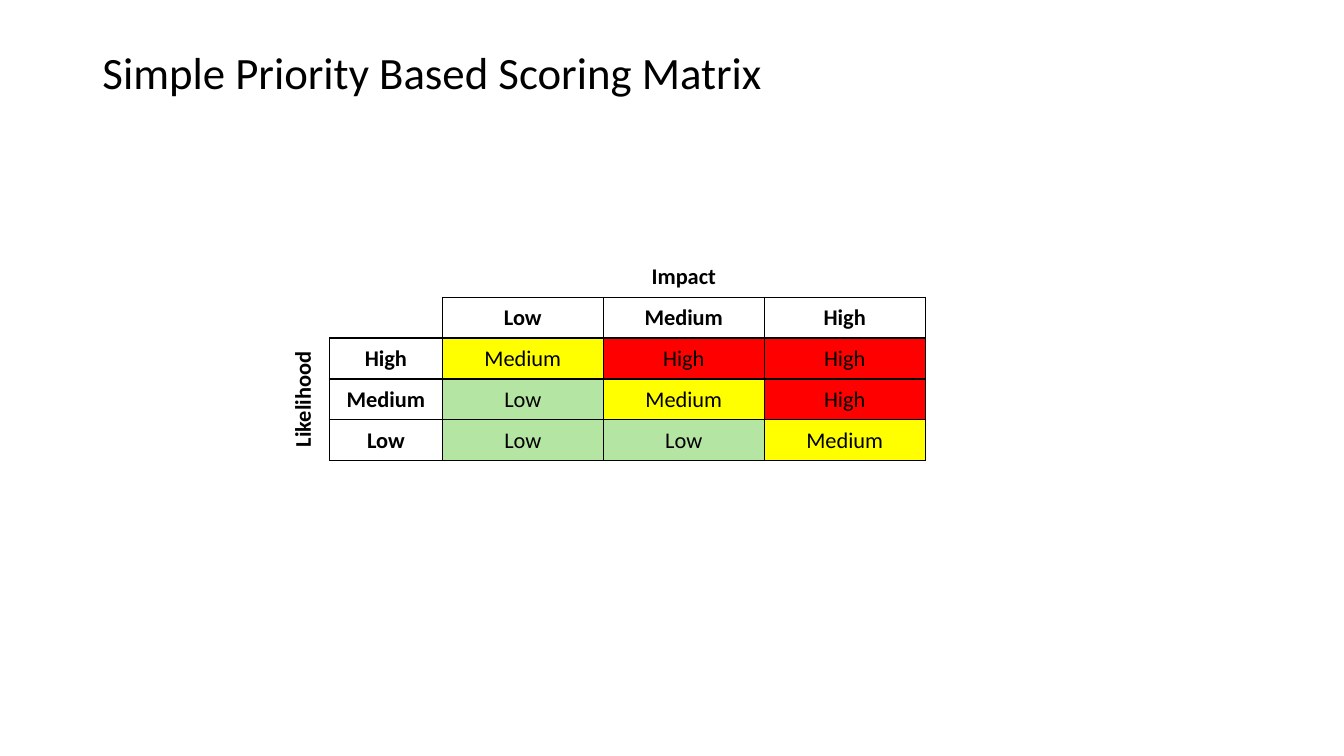
import pptx
import pptx.dml.color
import pptx.enum.text
import pptx.oxml
import pptx.oxml.ns
import pptx.util
from dataclasses import dataclass

Pt = pptx.util.Pt
PP_ALIGN = pptx.enum.text.PP_ALIGN
MSO_ANCHOR = pptx.enum.text.MSO_ANCHOR


@dataclass(frozen=True)
class Theme:
    font: str = "Calibri"
    title_size: float = 32
    cell_size: float = 16
    border_width: float = 1
    ink: str = "000000"
    low: str = "B4E5A2"
    medium: str = "FFFF00"
    high: str = "FF0000"


THEME = Theme()
RATING_FILL = {"Low": THEME.low, "Medium": THEME.medium, "High": THEME.high}
GRID = [
    ["", "", "Impact", "", ""],
    ["", "", "Low", "Medium", "High"],
    ["Likelihood", "High", "Medium", "High", "High"],
    ["", "Medium", "Low", "Medium", "High"],
    ["", "Low", "Low", "Low", "Medium"],
]
COLUMN_WIDTHS = [29.3, 80.7, 115, 115, 115]
ROW_HEIGHT = 29.25


def add_run(p, text, size, bold=False):
    r = p.add_run()
    r.text = text
    r.font.name = THEME.font
    r.font.size = Pt(size)
    r.font.bold = bold
    r.font.color.rgb = pptx.dml.color.RGBColor.from_string(THEME.ink)


def is_boxed(row, col):
    """Header labels and ratings are boxed; axis names and the corner are not."""
    return 1 <= row <= 4 and 1 <= col <= 4 and (row, col) != (1, 1)


def set_borders(cell, row, col):
    """Draw each edge that touches a boxed cell and clear the others."""
    tcPr = cell._tc.get_or_add_tcPr()
    neighbours = {"lnL": (row, col - 1), "lnR": (row, col + 1),
                  "lnT": (row - 1, col), "lnB": (row + 1, col)}
    for tag, neighbour in neighbours.items():
        drawn = is_boxed(row, col) or is_boxed(*neighbour)
        paint = (f'<a:solidFill><a:srgbClr val="{THEME.ink}"/></a:solidFill>'
                 if drawn else "<a:noFill/>")
        tcPr.append(pptx.oxml.parse_xml(
            f'<a:{tag} {pptx.oxml.ns.nsdecls("a")} w="{Pt(THEME.border_width)}">'
            f"{paint}</a:{tag}>"))


def format_cell(cell, row, col):
    text = GRID[row][col]
    is_rating = row >= 2 and col >= 2
    cell.margin_left = cell.margin_right = cell.margin_top = Pt(0.75)
    cell.margin_bottom = 0
    cell.vertical_anchor = MSO_ANCHOR.MIDDLE
    set_borders(cell, row, col)
    if is_rating:
        cell.fill.solid()
        cell.fill.fore_color.rgb = pptx.dml.color.RGBColor.from_string(RATING_FILL[text])
    else:
        cell.fill.background()
    if text:
        p = cell.text_frame.paragraphs[0]
        p.alignment = PP_ALIGN.CENTER
        add_run(p, text, THEME.cell_size, bold=not is_rating)


def add_title(s, text, left, top, width, height):
    sp = s.shapes.title
    sp.left, sp.top, sp.width, sp.height = Pt(left), Pt(top), Pt(width), Pt(height)
    tf = sp.text_frame
    tf.vertical_anchor = MSO_ANCHOR.MIDDLE
    p = tf.paragraphs[0]
    p.alignment = PP_ALIGN.LEFT
    p.line_spacing = 0.9
    add_run(p, text, THEME.title_size)


def add_matrix(s, left, top, width, height):
    table = s.shapes.add_table(len(GRID), len(COLUMN_WIDTHS), Pt(left), Pt(top),
                               Pt(width), Pt(height)).table
    table.first_row = table.horz_banding = False
    for column, share in zip(table.columns, COLUMN_WIDTHS):
        column.width = Pt(width * share / sum(COLUMN_WIDTHS))
    for row in table.rows:
        row.height = Pt(height / len(GRID))

    # Empty corner, impact heading, likelihood heading
    for first, last in [((0, 0), (1, 1)), ((0, 2), (0, 4)), ((2, 0), (4, 0))]:
        table.cell(*first).merge(table.cell(*last))
    for row in range(len(GRID)):
        for col in range(len(COLUMN_WIDTHS)):
            format_cell(table.cell(row, col), row, col)
    table.cell(2, 0)._tc.get_or_add_tcPr().set("vert", "vert270")


def main():
    prs = pptx.Presentation()
    prs.slide_width, prs.slide_height = Pt(960), Pt(540)
    s = prs.slides.add_slide(prs.slide_layouts[5])

    # Title
    add_title(s, "Simple Priority Based Scoring Matrix", 66, 21.6, 828, 64)

    # Scoring matrix
    add_matrix(s, 206, 183, sum(COLUMN_WIDTHS), ROW_HEIGHT * len(GRID))

    prs.save("out.pptx")


if __name__ == "__main__":
    main()
